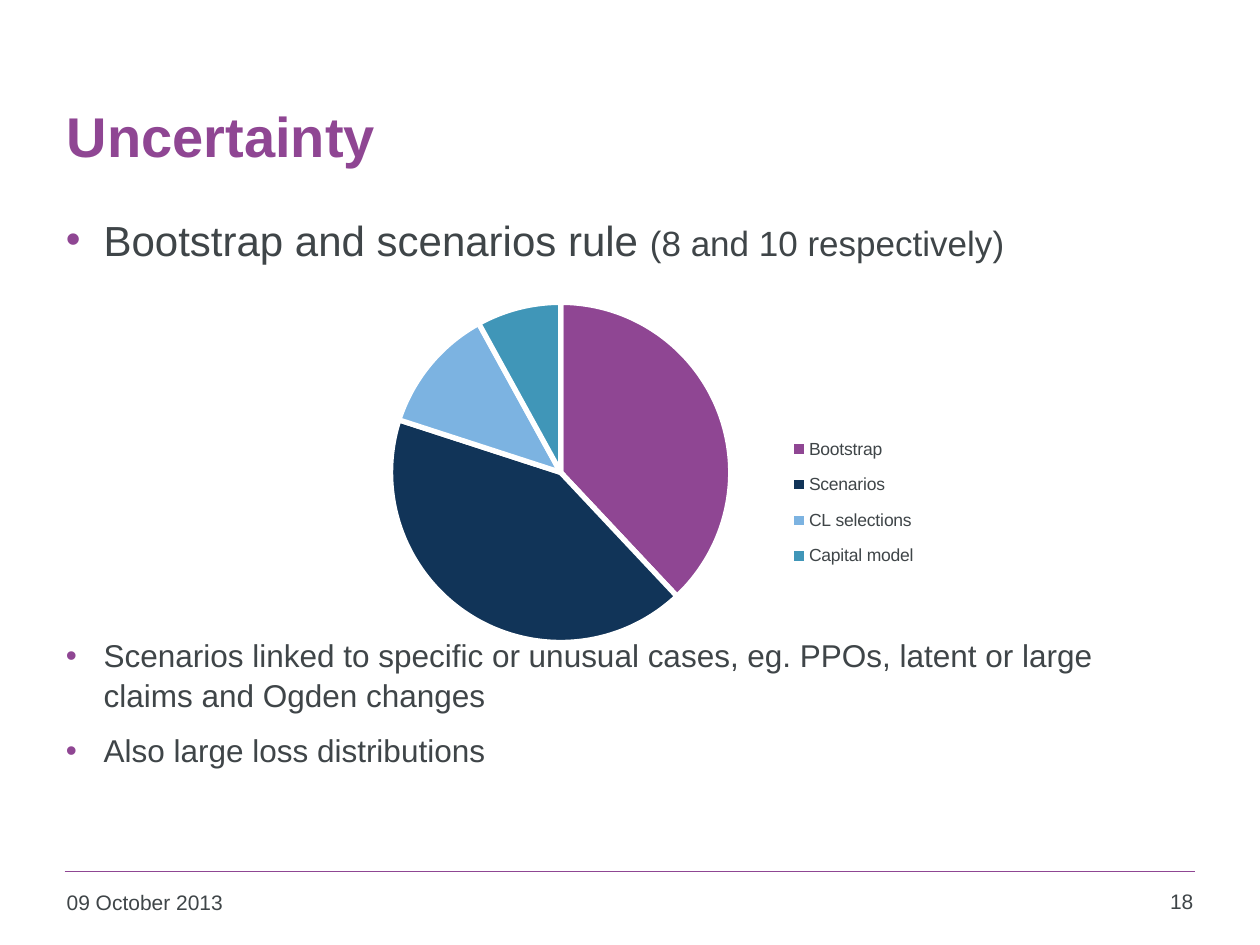
import pptx
import pptx.chart.data
import pptx.dml.color
import pptx.enum.chart
import pptx.enum.shapes
import pptx.enum.text
import pptx.oxml
import pptx.oxml.ns
import pptx.util

Pt = pptx.util.Pt
RGBColor = pptx.dml.color.RGBColor
ALIGN = pptx.enum.text.PP_ALIGN
ANCHOR = pptx.enum.text.MSO_ANCHOR

THEME = {
    "font": "Arial",
    "accent": RGBColor.from_string("8F4693"),
    "text": RGBColor.from_string("3F4548"),
    "white": RGBColor.from_string("FFFFFF"),
    "slices": ["8F4693", "113458", "7CB3E1", "4096B8"],
    "title_size": 32,
    "lead_size": 24,
    "aside_size": 20,
    "body_size": 18,
    "footer_size": 12,
    "chart_size": 10,
}


def write_text(paragraph, text, size, color=THEME["text"], bold=False,
               align=ALIGN.LEFT, bullet=False):
    """Add a formatted run, with a hanging bullet on the paragraph if asked."""
    run = paragraph.add_run()
    run.text = text
    run.font.name = THEME["font"]
    run.font.size = Pt(size)
    run.font.bold = bold
    run.font.color.rgb = color
    paragraph.alignment = align
    if bullet:
        paragraph.line_spacing = 1.05
        paragraph.space_before = Pt(9)
        properties = paragraph._p.get_or_add_pPr()
        properties.set("marL", str(Pt(21.6)))
        properties.set("indent", str(-Pt(21.6)))
        namespace = pptx.oxml.ns.nsdecls("a")
        for element in (
            f'<a:buClr {namespace}><a:srgbClr val="{THEME["accent"]}"/></a:buClr>',
            f'<a:buFont {namespace} typeface="{THEME["font"]}"/>',
            f'<a:buChar {namespace} char="•"/>',
        ):
            properties.append(pptx.oxml.parse_xml(element))


def add_text_frame(slide, left, top, width, height):
    """Add a wrapping text box and return its text frame."""
    shape = slide.shapes.add_textbox(Pt(left), Pt(top), Pt(width), Pt(height))
    shape.text_frame.word_wrap = True
    return shape.text_frame


presentation = pptx.Presentation()
presentation.slide_width = Pt(720)
presentation.slide_height = Pt(540)
slide = presentation.slides.add_slide(presentation.slide_layouts[5])

# Footer rule
rule = slide.shapes.add_connector(
    pptx.enum.shapes.MSO_CONNECTOR.STRAIGHT, Pt(37), Pt(498), Pt(683), Pt(498))
rule.line.color.rgb = THEME["accent"]
rule.line.width = Pt(1)
rule._element.spPr.append(
    pptx.oxml.parse_xml(f'<a:effectLst {pptx.oxml.ns.nsdecls("a")}/>'))

# Title
title = slide.shapes.title
title.left, title.top, title.width, title.height = Pt(31), Pt(32), Pt(653), Pt(90)
title.text_frame.vertical_anchor = ANCHOR.MIDDLE
write_text(title.text_frame.paragraphs[0], "Uncertainty",
           size=THEME["title_size"], color=THEME["accent"], bold=True)

# Date and page number
for text, left, top, width, align in (
    ("09 October 2013", 31, 505, 158, ALIGN.LEFT),
    ("18", 638, 504, 51, ALIGN.RIGHT),
):
    frame = add_text_frame(slide, left, top, width, 26)
    write_text(frame.paragraphs[0], text, size=THEME["footer_size"], align=align)

# Lead bullet above the chart
lead = add_text_frame(slide, 30.5, 117.5, 619, 40).paragraphs[0]
write_text(lead, "Bootstrap and scenarios rule ", size=THEME["lead_size"], bullet=True)
write_text(lead, "(8 and 10 respectively)", size=THEME["aside_size"])
lead.space_before = Pt(0)

# Bullets below the chart
details = add_text_frame(slide, 30.5, 359, 619, 90)
write_text(details.paragraphs[0],
           "Scenarios linked to specific or unusual cases, eg. PPOs, "
           "latent or large claims and Ogden changes",
           size=THEME["body_size"], bullet=True)
details.paragraphs[0].space_before = Pt(0)
write_text(details.add_paragraph(), "Also large loss distributions",
           size=THEME["body_size"], bullet=True)

# Pie chart
chart_data = pptx.chart.data.CategoryChartData()
chart_data.categories = ["Bootstrap", "Scenarios", "CL selections", "Capital model"]
chart_data.add_series("Series 1", (38, 42, 12, 8))
chart = slide.shapes.add_chart(
    pptx.enum.chart.XL_CHART_TYPE.PIE,
    Pt(180), Pt(162), Pt(360), Pt(216), chart_data).chart
chart.has_title = False
chart.font.name = THEME["font"]
chart.font.size = Pt(THEME["chart_size"])
chart.font.color.rgb = THEME["text"]
chart.has_legend = True
chart.legend.position = pptx.enum.chart.XL_LEGEND_POSITION.RIGHT
chart.legend.include_in_layout = False

plot = chart.plots[0]
plot.vary_by_categories = True
for index, color in enumerate(THEME["slices"]):
    slice_format = plot.series[0].points[index].format
    slice_format.fill.solid()
    slice_format.fill.fore_color.rgb = RGBColor.from_string(color)
    slice_format.line.color.rgb = THEME["white"]
    slice_format.line.width = Pt(3)

# Fixed places for the pie and its legend, as shares of the chart
plot_area = chart._chartSpace.chart.plotArea
for old_layout in plot_area.findall(pptx.oxml.ns.qn("c:layout")):
    plot_area.remove(old_layout)
legend = chart.legend._element
for old_layout in legend.findall(pptx.oxml.ns.qn("c:layout")):
    legend.remove(old_layout)
for parent, position, target, shares in (
    (plot_area, 0, '<c:layoutTarget val="inner"/>', (0.12, 0.05, 0.54, 0.9)),
    (legend, 1, "", (0.73, 0.37, 0.25, 0.42)),
):
    x, y, width, height = shares
    parent.insert(position, pptx.oxml.parse_xml(
        f'<c:layout {pptx.oxml.ns.nsdecls("c")}><c:manualLayout>{target}'
        f'<c:xMode val="edge"/><c:yMode val="edge"/><c:x val="{x}"/><c:y val="{y}"/>'
        f'<c:w val="{width}"/><c:h val="{height}"/></c:manualLayout></c:layout>'))

presentation.save("out.pptx")
